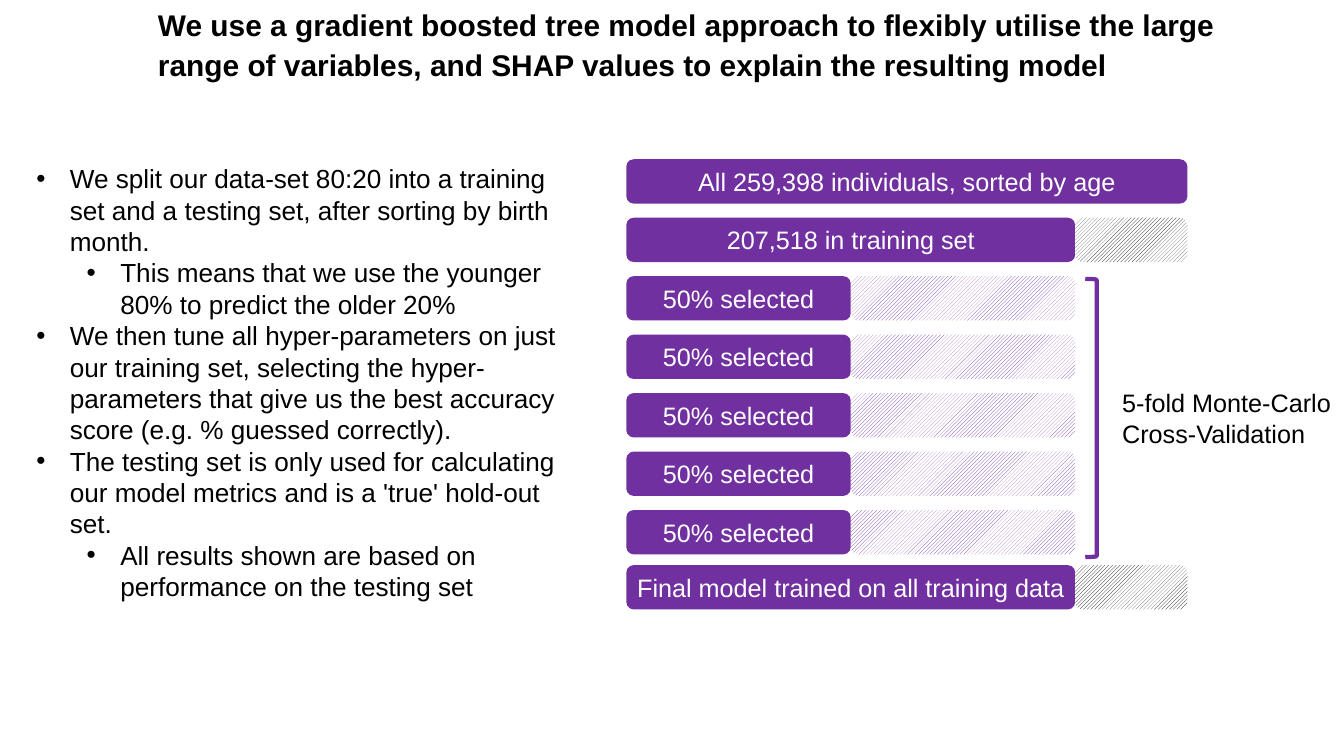
from dataclasses import dataclass

from lxml import etree
from pptx import Presentation
from pptx.dml.color import RGBColor
from pptx.enum.dml import MSO_PATTERN
from pptx.enum.shapes import MSO_SHAPE
from pptx.enum.text import MSO_ANCHOR, MSO_AUTO_SIZE, PP_ALIGN
from pptx.oxml.ns import qn
from pptx.util import Inches, Pt

PURPLE = RGBColor(0x70, 0x30, 0xA0)
BLACK = RGBColor(0x00, 0x00, 0x00)
WHITE = RGBColor(0xFF, 0xFF, 0xFF)
FONT = "Arial"

ROUNDED = MSO_SHAPE.ROUNDED_RECTANGLE
BRACKET = MSO_SHAPE.RIGHT_BRACKET
HATCH = MSO_PATTERN.WIDE_UPWARD_DIAGONAL
TOP, MIDDLE = MSO_ANCHOR.TOP, MSO_ANCHOR.MIDDLE
LEFT, CENTER = PP_ALIGN.LEFT, PP_ALIGN.CENTER
NO_AUTOFIT = MSO_AUTO_SIZE.NONE

BAR_LEFT, BAR_TOP, BAR_HEIGHT, BAR_PITCH = 9.32, 2.37, 0.66, 0.87
FINAL_TOP = 8.41
ALL_WIDTH = 8.35
TRAIN_WIDTH = ALL_WIDTH * 0.8
FOLD_WIDTH = TRAIN_WIDTH * 0.5
FOLDS = 5

TITLE = (
    "We use a gradient boosted tree model approach to flexibly utilise the large "
    "range of variables, and SHAP values to explain the resulting model"
)


@dataclass
class Bullet:
    text: str
    level: int = 0


@dataclass
class Bar:
    text: str
    top: float
    width: float
    full_width: float
    hatch: RGBColor = BLACK


BULLETS = [
    Bullet("We split our data-set 80:20 into a training set and a testing set, "
           "after sorting by birth month."),
    Bullet("This means that we use the younger 80% to predict the older 20%", 1),
    Bullet("We then tune all hyper-parameters on just our training set, selecting "
           "the hyper-parameters that give us the best accuracy score "
           "(e.g. % guessed correctly)."),
    Bullet("The testing set is only used for calculating our model metrics and is "
           "a 'true' hold-out set."),
    Bullet("All results shown are based on performance on the testing set", 1),
]

BARS = [
    Bar("All 259,398 individuals, sorted by age", BAR_TOP, ALL_WIDTH, ALL_WIDTH),
    Bar("207,518 in training set", BAR_TOP + BAR_PITCH, TRAIN_WIDTH, ALL_WIDTH),
    *[Bar("50% selected", BAR_TOP + BAR_PITCH * (i + 2), FOLD_WIDTH, TRAIN_WIDTH, PURPLE)
      for i in range(FOLDS)],
    Bar("Final model trained on all training data", FINAL_TOP, TRAIN_WIDTH, ALL_WIDTH),
]


def place(sp, left: float, top: float, width: float, height: float) -> None:
    sp.left, sp.top = Inches(left), Inches(top)
    sp.width, sp.height = Inches(width), Inches(height)


def add_run(p, text: str, size: float, color: RGBColor, bold: bool = False) -> None:
    r = p.add_run()
    r.text = text
    r.font.name = FONT
    r.font.size = Pt(size)
    r.font.bold = bold
    r.font.color.rgb = color


def set_bullet(p, margin: float, indent: float) -> None:
    pPr = p._p.get_or_add_pPr()
    pPr.set("marL", str(Inches(margin)))
    pPr.set("indent", str(Inches(indent)))
    etree.SubElement(pPr, qn("a:buFont")).set("typeface", FONT)
    etree.SubElement(pPr, qn("a:buChar")).set("char", "•")


def fill_title(sp) -> None:
    place(sp, 2.25, 0, 16.88, 1)
    tf = sp.text_frame
    tf.word_wrap = True
    tf.auto_size = NO_AUTOFIT
    tf.vertical_anchor = TOP
    p = tf.paragraphs[0]
    p.alignment = LEFT
    p.line_spacing = 1.1
    add_run(p, TITLE, 32, BLACK, True)


def fill_body(sp, bullets: list[Bullet]) -> None:
    place(sp, 0.44, 2.37, 8.31, 6.7)
    tf = sp.text_frame
    tf.word_wrap = True
    tf.auto_size = NO_AUTOFIT
    for i, bullet in enumerate(bullets):
        p = tf.add_paragraph() if i else tf.paragraphs[0]
        p.level = bullet.level
        p.space_before = Pt(0)
        set_bullet(p, 0.5 + 0.75 * bullet.level, -0.5)
        add_run(p, bullet.text, 28, BLACK)


def add_block(shapes, left: float, top: float, width: float):
    sp = shapes.add_shape(ROUNDED, Inches(left), Inches(top), Inches(width), Inches(BAR_HEIGHT))
    sp.shadow.inherit = False
    sp.line.fill.background()
    return sp


def add_bar(shapes, bar: Bar) -> None:
    sp = add_block(shapes, BAR_LEFT, bar.top, bar.width)
    sp.fill.solid()
    sp.fill.fore_color.rgb = PURPLE
    tf = sp.text_frame
    tf.word_wrap = True
    tf.vertical_anchor = MIDDLE
    p = tf.paragraphs[0]
    p.alignment = CENTER
    add_run(p, bar.text, 27, WHITE)

    if bar.width < bar.full_width:
        rest = add_block(shapes, BAR_LEFT + bar.width, bar.top, bar.full_width - bar.width)
        rest.fill.patterned()
        rest.fill.pattern = HATCH
        rest.fill.fore_color.rgb = bar.hatch
        rest.fill.back_color.rgb = WHITE


def add_fold_bracket(shapes) -> None:
    sp = shapes.add_shape(BRACKET, Inches(16.15), Inches(4.15), Inches(0.17), Inches(4.14))
    sp.shadow.inherit = False
    sp.fill.background()
    sp.line.color.rgb = PURPLE
    sp.line.width = Pt(4.5)

    label = shapes.add_textbox(Inches(16.6), Inches(5.72), Inches(3.82), Inches(1.04))
    tf = label.text_frame
    tf.word_wrap = True
    add_run(tf.paragraphs[0], "5-fold Monte-Carlo Cross-Validation", 27, BLACK)


def main() -> None:
    prs = Presentation()
    prs.slide_width, prs.slide_height = Inches(20), Inches(11.25)
    s = prs.slides.add_slide(prs.slide_layouts[1])
    fill_title(s.shapes.title)
    fill_body(s.placeholders[1], BULLETS)
    for bar in BARS:
        add_bar(s.shapes, bar)
    add_fold_bracket(s.shapes)
    prs.save("out.pptx")


if __name__ == "__main__":
    main()
